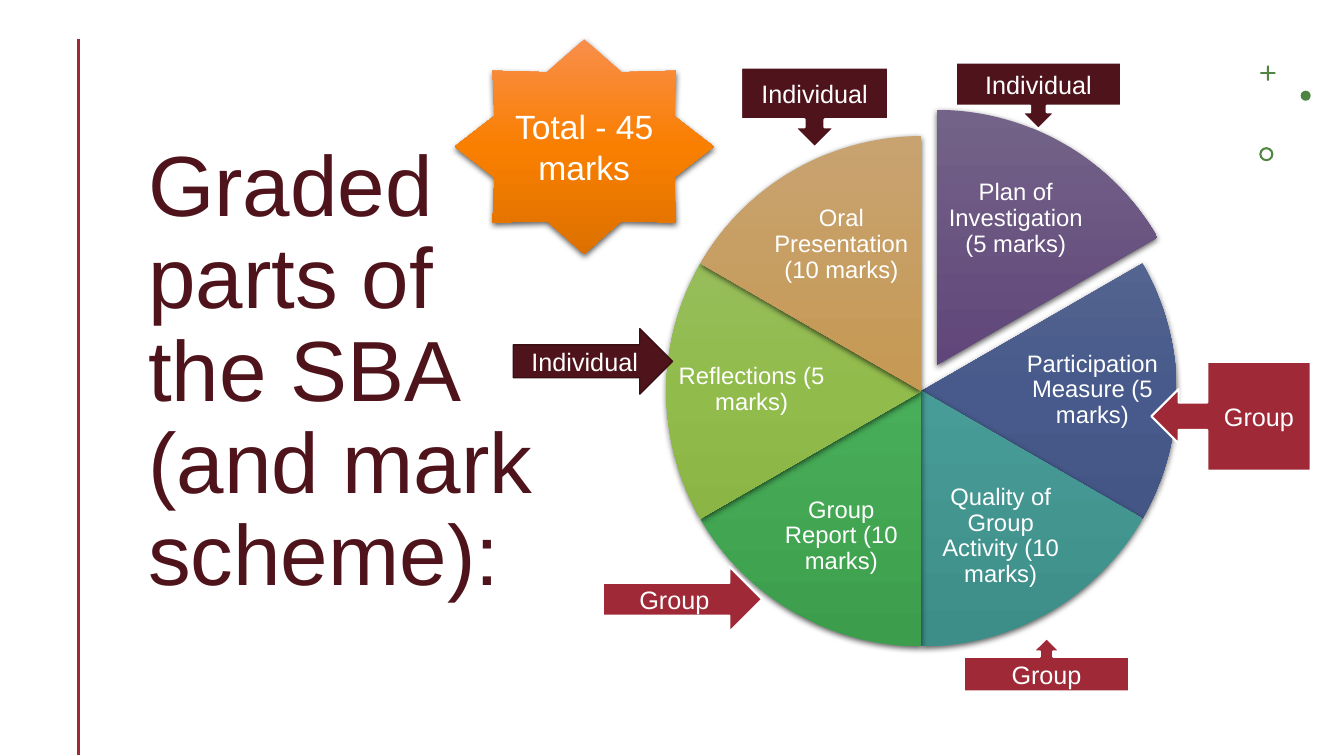
from lxml import etree
from pptx import Presentation
from pptx.dml.color import RGBColor
from pptx.enum.shapes import MSO_CONNECTOR, MSO_SHAPE
from pptx.enum.text import MSO_ANCHOR, PP_ALIGN
from pptx.oxml.ns import qn
from pptx.util import Inches, Pt

LEFT, CENTER, MIDDLE = PP_ALIGN.LEFT, PP_ALIGN.CENTER, MSO_ANCHOR.MIDDLE
PIE, STAR, CROSS = MSO_SHAPE.PIE, MSO_SHAPE.STAR_8_POINT, MSO_SHAPE.CROSS
OVAL, DONUT, ARROW = MSO_SHAPE.OVAL, MSO_SHAPE.DONUT, MSO_SHAPE.RIGHT_ARROW
DOWN, UP = MSO_SHAPE.DOWN_ARROW_CALLOUT, MSO_SHAPE.UP_ARROW_CALLOUT
BACK = MSO_SHAPE.LEFT_ARROW_CALLOUT

# Content
FONT, WHITE, DARK, RED, GREEN = "Arial", "FFFFFF", "4F141B", "9F2936", "4E8542"
TITLE = "Graded parts of the SBA (and mark scheme):"
TOTAL = "Total - 45 marks"
ORANGE = ("F98E4B", "F97F00", "DD7100")

# Clockwise from the top: label, label box, gradient
SLICES = [
    ("Plan of Investigation (5 marks)", (9.34, 1.63, 1.47, 1.08),
     ("746388", "60467A", "553C6F")),
    ("Participation Measure (5 marks)", (10.07, 3.36, 1.53, 1.02),
     ("647096", "475A8B", "3D4F7E")),
    ("Quality of Group Activity (10 marks)", (9.19, 4.78, 1.47, 1.08),
     ("65A4A0", "489C97", "3D8E89")),
    ("Group Report (10 marks)", (7.61, 4.78, 1.47, 1.08),
     ("65B471", "48AE59", "3C9E4C")),
    ("Reflections (5 marks)", (6.69, 3.36, 1.53, 1.02),
     ("9CBF6A", "91BC4C", "82AD3E")),
    ("Oral Presentation (10 marks)", (7.61, 1.89, 1.47, 1.08),
     ("C8A370", "C69954", "B68945")),
]
PULLED, ROUND = (6.76, 1.09, 5.06, 5.06), (6.61, 1.35, 5.06, 5.06)

# Label, shape, box, fill, line colour, line width
TAGS = [
    ("Individual", DOWN, (9.48, 0.62, 1.64, 0.66), DARK, WHITE, 1.5),
    ("Individual", DOWN, (7.35, 0.67, 1.46, 0.79), DARK, WHITE, 1.5),
    ("Individual", ARROW, (5.09, 3.26, 1.58, 0.65), DARK, "3A0F14", 1),
    ("Group", ARROW, (5.98, 5.62, 1.58, 0.65), RED, WHITE, 1.5),
    ("Group", UP, (9.56, 6.33, 1.64, 0.53), RED, WHITE, 1.5),
    ("Group", BACK, (11.42, 3.59, 1.58, 1.08), RED, WHITE, 1.5),
]

# Shape, box, adjustments
MARKS = [
    (CROSS, (12.5, 0.65, 0.15, 0.15), [0.44]),
    (OVAL, (12.9, 0.9, 0.1, 0.1), []),
    (DONUT, (12.49, 1.46, 0.14, 0.14), [0.15]),
]

prs = Presentation()
prs.slide_width, prs.slide_height = Inches(13.33), Inches(7.5)
slide = prs.slides.add_slide(prs.slide_layouts[6])


def color(code):
    return RGBColor.from_string(code)


def write(text, box=None, host=None, size=18, ink=WHITE, align=CENTER,
          space=None, inset=None):
    """Put text in a host shape, or in a new text box."""
    host = host or slide.shapes.add_textbox(*map(Inches, box))
    frame = host.text_frame
    frame.word_wrap, frame.vertical_anchor = True, MIDDLE
    if inset is not None:
        frame.margin_left = frame.margin_right = Inches(inset)
        frame.margin_top = frame.margin_bottom = Inches(inset)
    para = frame.paragraphs[0]
    para.alignment, para.line_spacing = align, space
    run = para.add_run()
    run.text = text
    run.font.name, run.font.size = FONT, Pt(size)
    run.font.color.rgb = color(ink)


def draw(kind, box, fill, edge=None, width=1, adj=()):
    shape = slide.shapes.add_shape(kind, *map(Inches, box))
    shape.shadow.inherit = False
    for i, value in enumerate(adj):
        shape.adjustments[i] = value
    shape.fill.solid()
    shape.fill.fore_color.rgb = color(fill)
    if edge:
        shape.line.color.rgb = color(edge)
        shape.line.width = Pt(width)
    else:
        shape.line.fill.background()
    return shape


def glow(kind, box, shades, adj=()):
    """Draw a shape with a vertical three-stop gradient and a soft shadow."""
    shape = draw(kind, box, shades[0], adj=adj)
    shape.fill.gradient()
    shape.fill.gradient_angle = 270
    stops = shape._element.spPr.find(qn("a:gradFill")).find(qn("a:gsLst"))
    for stop in list(stops):
        stops.remove(stop)
    for place, shade in zip((0, 50000, 100000), shades):
        stop = etree.SubElement(stops, qn("a:gs"), pos=str(place))
        etree.SubElement(stop, qn("a:srgbClr"), val=shade)
    effects = shape._element.spPr.find(qn("a:effectLst"))
    cast = etree.SubElement(effects, qn("a:outerShdw"), blurRad=str(Pt(4.5)),
                            dist=str(Pt(1.5)), dir="5400000", rotWithShape="0")
    black = etree.SubElement(cast, qn("a:srgbClr"), val="000000")
    etree.SubElement(black, qn("a:alpha"), val="63000")
    return shape


# Title and side rule
write(TITLE, (1.37, 0.65, 4.31, 6.11), size=61, ink=DARK, align=LEFT, space=0.9)
rule = slide.shapes.add_connector(MSO_CONNECTOR.STRAIGHT, Inches(0.78),
                                  Inches(0.39), Inches(0.78), Inches(7.49))
rule.line.color.rgb, rule.line.width = color(RED), Pt(2)
etree.SubElement(rule._element.spPr, qn("a:effectLst"))

# Corner marks
for kind, box, adj in MARKS:
    draw(kind, box, GREEN, adj=adj)

# Wheel: equal slices, with angles in units of 100000/60000 degree
TURN = 216
STEP = TURN // len(SLICES)
for i, (label, box, shades) in enumerate(SLICES):
    start = (162 + i * STEP) % TURN
    glow(PIE, ROUND if i else PULLED, shades, (start, (start + STEP) % TURN))
    write(label, box, size=17, space=0.9, inset=0.02)

# Total star and tags
star = glow(STAR, (4.51, 0.39, 2.57, 2.13), ORANGE)
write(TOTAL, host=star, size=24)
for label, kind, box, fill, edge, width in TAGS:
    write(label, host=draw(kind, box, fill, edge, width))

prs.save("out.pptx")
